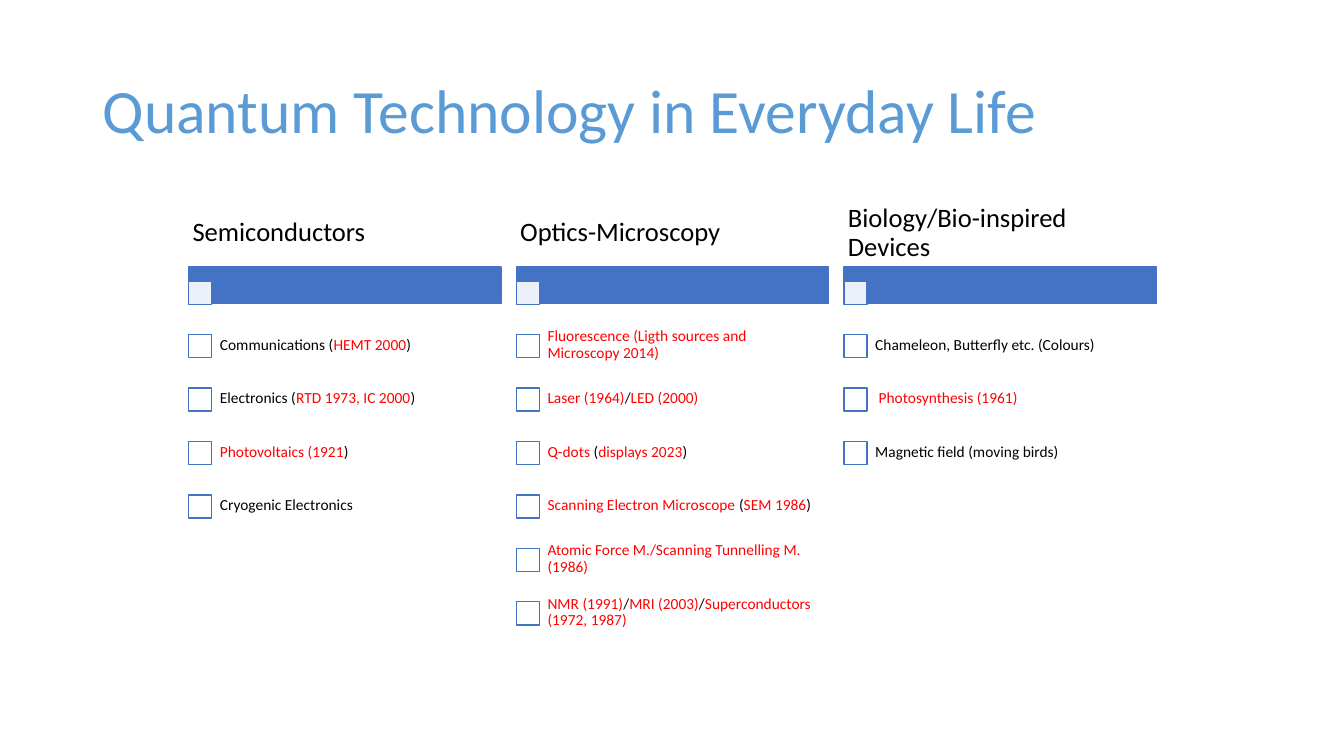
from dataclasses import dataclass
from functools import partial

from lxml import etree
from pptx import Presentation
from pptx.dml import color as dml
from pptx.enum import shapes, text
from pptx.oxml import ns
from pptx.util import Inches, Pt

COLORS = {
    "title": "5B9BD5",
    "accent": "4472C4",
    "white": "FFFFFF",
    "black": "000000",
    "red": "FF0000",
}
FONT = "Calibri"

# Grid of the diagram, in inches
FIRST_LEFT, COLUMN_PITCH, COLUMN_WIDTH = 1.87, 3.25, 3.1
HEADING_TOP, HEADING_HEIGHT = 1.99, 0.65
BAR_TOP, BAR_HEIGHT = 2.65, 0.36
BOX_SIZE, BAR_BOX_TOP = 0.23, 2.79
FIRST_ROW_TOP, ROW_HEIGHT = 3.16, 0.53
BOX_OFFSET, LABEL_INDENT = 0.16, 0.22


@dataclass(frozen=True)
class Run:
    words: str
    ink: str = "black"


@dataclass(frozen=True)
class Field:
    heading: str
    items: list[list[Run]]


prize = partial(Run, ink="red")

FIELDS = [
    Field("Semiconductors", [
        [Run("Communications ("), prize("HEMT 2000"), Run(")")],
        [Run("Electronics ("), prize("RTD 1973, IC 2000"), Run(")")],
        [prize("Photovoltaics (1921"), Run(")")],
        [Run("Cryogenic Electronics")],
    ]),
    Field("Optics-Microscopy", [
        [prize("Fluorescence (Ligth sources and Microscopy 2014)")],
        [prize("Laser (1964)"), Run("/"), prize("LED (2000)")],
        [prize("Q-dots"), Run(" ("), prize("displays 2023"), Run(")")],
        [prize("Scanning Electron Microscope "), Run("("), prize("SEM 1986"), Run(")")],
        [prize("Atomic Force M./Scanning Tunnelling M. (1986)")],
        [prize("NMR (1991)"), Run("/"), prize("MRI (2003)"), Run("/"),
         prize("Superconductors (1972, 1987)")],
    ]),
    Field("Biology/Bio-inspired Devices", [
        [Run("Chameleon, Butterfly etc. (Colours)")],
        [Run(" "), prize("Photosynthesis (1961)")],
        [Run("Magnetic field (moving birds)")],
    ]),
]


def rgb(name: str) -> dml.RGBColor:
    return dml.RGBColor.from_string(COLORS[name])


def add_rect(parent, left: float, top: float, width: float, height: float,
             fill: str, opacity: int = 100) -> None:
    rect = parent.add_shape(shapes.MSO_SHAPE.RECTANGLE, Inches(left), Inches(top),
                            Inches(width), Inches(height))
    rect.shadow.inherit = False
    rect.fill.solid()
    rect.fill.fore_color.rgb = rgb(fill)
    rect.line.color.rgb = rgb("accent")
    rect.line.width = Pt(1)
    if opacity < 100:
        tint = rect.fill._xPr.find(".//" + ns.qn("a:srgbClr"))
        etree.SubElement(tint, ns.qn("a:alpha"), val=str(opacity * 1000))


def add_text(parent, left: float, top: float, width: float, height: float,
             runs: list[Run], size: int, inset_x: float, inset_y: float) -> None:
    label = parent.add_textbox(Inches(left), Inches(top), Inches(width), Inches(height))
    frame = label.text_frame
    frame_format = {
        "word_wrap": True,
        "vertical_anchor": text.MSO_ANCHOR.MIDDLE,
        "margin_left": Inches(inset_x),
        "margin_right": Inches(inset_x),
        "margin_top": Inches(inset_y),
        "margin_bottom": Inches(inset_y),
    }
    for attribute, value in frame_format.items():
        setattr(frame, attribute, value)
    paragraph = frame.paragraphs[0]
    paragraph.line_spacing = 0.9
    for part in runs:
        run = paragraph.add_run()
        run.text = part.words
        for attribute, value in {"name": FONT, "size": Pt(size)}.items():
            setattr(run.font, attribute, value)
        run.font.color.rgb = rgb(part.ink)


def add_field(parent, left: float, field: Field) -> None:
    # Bar with its tinted box, and the heading above
    add_rect(parent, left, BAR_TOP, COLUMN_WIDTH, BAR_HEIGHT, "accent")
    add_rect(parent, left, BAR_BOX_TOP, BOX_SIZE, BOX_SIZE, "white", opacity=90)
    add_text(parent, left, HEADING_TOP, COLUMN_WIDTH, HEADING_HEIGHT,
             [Run(field.heading)], 19, 0.04, 0.03)
    # Checklist
    for row, runs in enumerate(field.items):
        top = FIRST_ROW_TOP + row * ROW_HEIGHT
        add_rect(parent, left, top + BOX_OFFSET, BOX_SIZE, BOX_SIZE, "white")
        add_text(parent, left + LABEL_INDENT, top, COLUMN_WIDTH - LABEL_INDENT,
                 ROW_HEIGHT, runs, 11, 0.09, 0.09)


def main() -> None:
    deck = Presentation()
    deck.slide_width, deck.slide_height = Inches(13.33), Inches(7.5)
    slide = deck.slides.add_slide(deck.slide_layouts[6])

    # Title
    add_text(slide.shapes, 0.92, 0.4, 11.5, 1.45,
             [Run("Quantum Technology in Everyday Life", "title")], 44, 0.1, 0.05)

    # Three columns of applications
    diagram = slide.shapes.add_group_shape()
    for column, field in enumerate(FIELDS):
        add_field(diagram.shapes, FIRST_LEFT + column * COLUMN_PITCH, field)

    deck.save("out.pptx")


if __name__ == "__main__":
    main()
